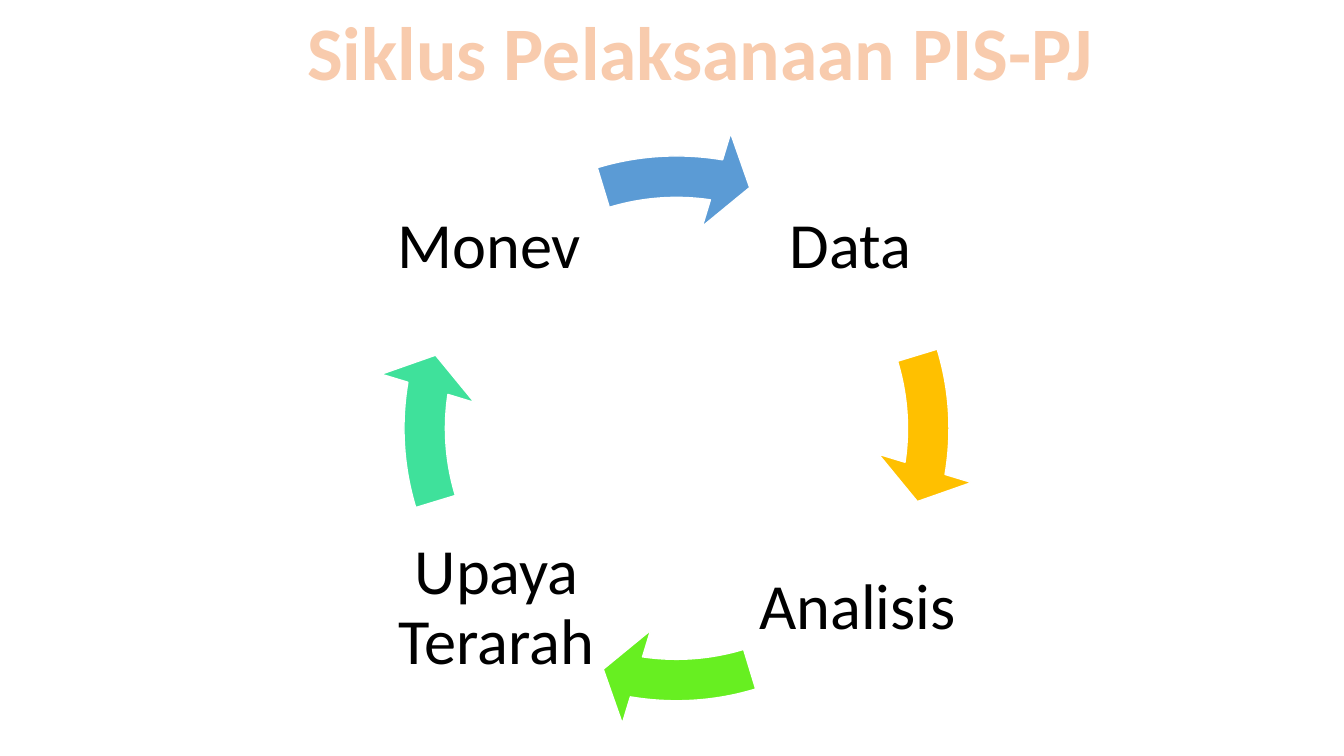
from lxml import etree
from pptx import Presentation, util as u
from pptx.dml.color import RGBColor
from pptx.enum import shapes, text
from pptx.oxml.ns import qn

# Content: steps clockwise from top right, with the arrow that leaves each one
TITLE = "Siklus Pelaksanaan PIS-PJ"
STEPS = [
    # label, column, row, arrow colour
    ("Data ", 1, 0, "FFC000"),
    ("Analisis ", 1, 1, "67EF21"),
    ("Upaya Terarah", 0, 1, "3FE19B"),
    ("Monev ", 0, 0, "5B9BD5"),
]
THEME = dict(font="Calibri", title_size=54, step_size=46, title="F8CBAD",
             title_line="ED7D31", step="000000", arrow_line="FFFFFF")

# Geometry
LEFT, TOP, PITCH, BOX = 3.87, 1.4, 3.58, 2.11
RING = (3.73, 1.27, 5.96, 5.96)
QUARTER, FULL = 54, 216  # angles in adjustment units
HEAD_END, TAIL_START = 5.485, 205.86


def color(name):
    return RGBColor.from_string(THEME.get(name, name))


def add_run(p, words, size, fill):
    r = p.add_run()
    r.text = words
    r.font.name = THEME["font"]
    r.font.size = u.Pt(THEME[size])
    r.font.color.rgb = color(fill)
    return r


def add_step(s, label, col, row):
    sp = s.shapes.add_textbox(u.Inches(LEFT + col * PITCH), u.Inches(TOP + row * PITCH),
                              u.Inches(BOX), u.Inches(BOX))
    tf = sp.text_frame
    tf.word_wrap = True
    tf.vertical_anchor = text.MSO_ANCHOR.MIDDLE
    tf.margin_left = tf.margin_right = tf.margin_top = tf.margin_bottom = u.Inches(0.06)
    p = tf.paragraphs[0]
    p.alignment = text.PP_ALIGN.CENTER
    p.line_spacing = 0.9
    add_run(p, label, "step_size", "step")


def add_arrow(s, index, fill):
    sp = s.shapes.add_shape(shapes.MSO_SHAPE.CIRCULAR_ARROW, *map(u.Inches, RING))
    turn = index * QUARTER
    values = (0.069, 4.656, HEAD_END + turn, (TAIL_START + turn) % FULL, 0.081)
    for i, value in enumerate(values):
        sp.adjustments[i] = value
    sp.shadow.inherit = False
    sp.fill.solid()
    sp.fill.fore_color.rgb = color(fill)
    sp.line.color.rgb = color("arrow_line")
    sp.line.width = u.Pt(1)


def add_title(s):
    sp = s.shapes.title
    sp.left, sp.top, sp.width, sp.height = map(u.Inches, (2.91, 0, 8.07, 1.01))
    tf = sp.text_frame
    tf.word_wrap = False
    tf.auto_size = text.MSO_AUTO_SIZE.SHAPE_TO_FIT_TEXT
    tf.vertical_anchor = text.MSO_ANCHOR.TOP
    p = tf.paragraphs[0]
    p.alignment = text.PP_ALIGN.CENTER
    r = add_run(p, TITLE, "title_size", "title")
    r.font.bold = True
    # Letter outline
    ln = etree.Element(qn("a:ln"), w=str(u.Pt(1.75)))
    fill = etree.SubElement(ln, qn("a:solidFill"))
    etree.SubElement(fill, qn("a:srgbClr"), val=THEME["title_line"])
    r.font._element.insert(0, ln)


def main():
    prs = Presentation()
    prs.slide_width, prs.slide_height = u.Inches(13.33), u.Inches(7.5)
    s = prs.slides.add_slide(prs.slide_layouts[5])
    # Cycle of steps and arrows
    for i, (label, col, row, fill) in enumerate(STEPS):
        add_step(s, label, col, row)
        add_arrow(s, i, fill)
    add_title(s)
    prs.save("out.pptx")


if __name__ == "__main__":
    main()
